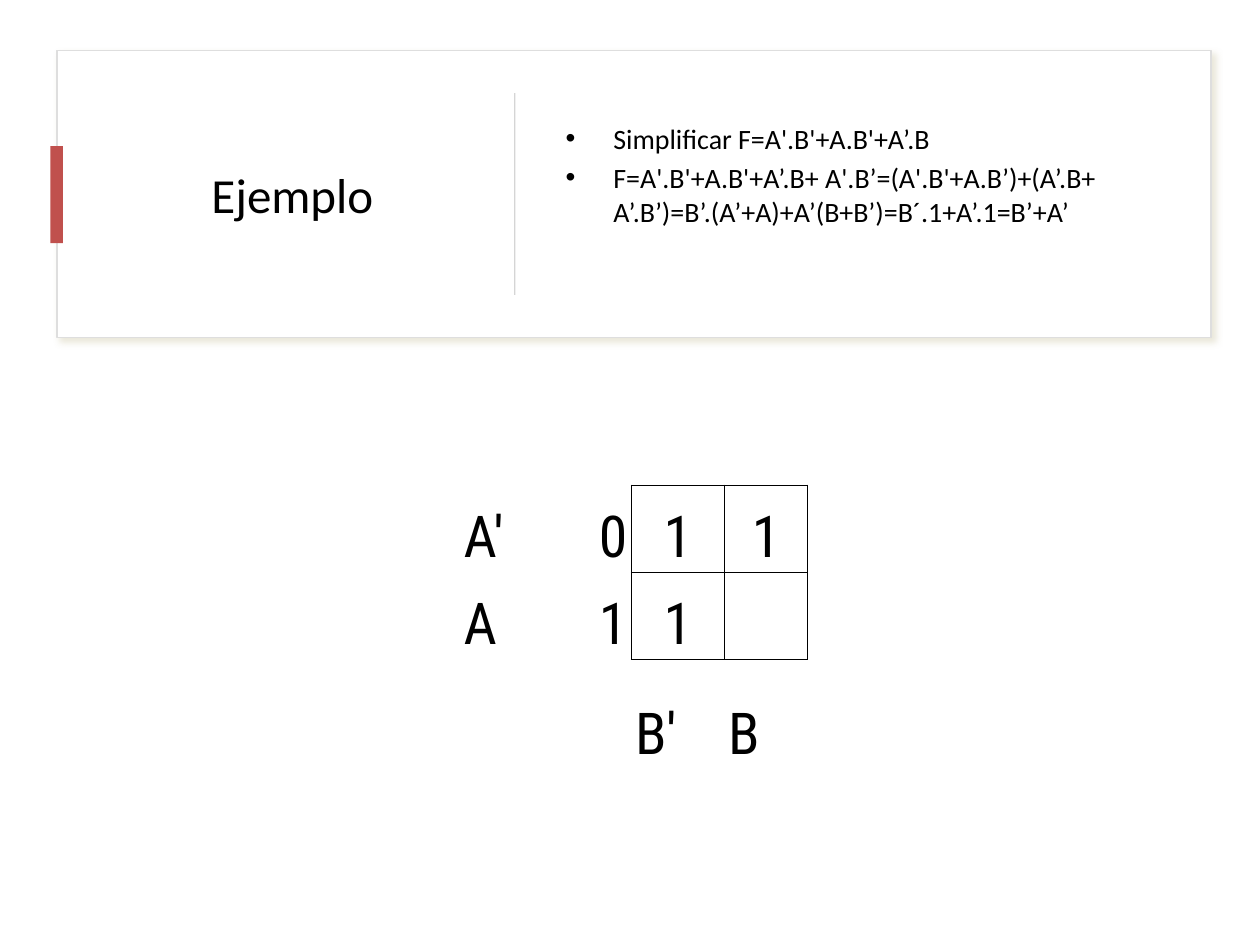
from lxml.etree import SubElement
from pptx import Presentation
from pptx.dml.color import RGBColor
from pptx.enum.shapes import MSO_SHAPE as Shape
from pptx.enum.text import MSO_ANCHOR as Anchor, PP_ALIGN as Align
from pptx.oxml.ns import qn
from pptx.util import Inches, Pt

BLACK = RGBColor(0x00, 0x00, 0x00)
WHITE = RGBColor(0xFF, 0xFF, 0xFF)
FRAME_GRAY = RGBColor(0xDE, 0xDE, 0xDE)
DIVIDER_GRAY = RGBColor(0xD5, 0xD5, 0xD5)
ACCENT_RED = RGBColor(0xC0, 0x50, 0x4D)
SHADOW_TAN = RGBColor(0xD5, 0xD0, 0xB5)

STEPS = [
    "Simplificar F=A'.B'+A.B'+A’.B",
    "F=A'.B'+A.B'+A’.B+ A'.B’=(A'.B'+A.B’)+(A’.B+ A’.B’)=B’.(A’+A)+A’(B+B’)=B´.1+A’.1=B’+A’",
]
MAP_ROWS = [["A'", "0", "1", "1"], ["A", "1", "1", ""], ["", "", "B'", "B"]]
MAP_ALIGNS = [Align.LEFT, Align.RIGHT, Align.CENTER, Align.CENTER]
COLUMN_WIDTHS = [0.73, 0.63, 0.74, 0.66]
ROW_HEIGHTS = [0.69, 0.69, 0.87]


def add_run(paragraph, text, font_name, size):
    run = paragraph.add_run()
    run.text = text
    run.font.name = font_name
    run.font.size = Pt(size)
    run.font.color.rgb = BLACK


def add_rectangle(slide, left, top, width, height, color):
    shape = slide.shapes.add_shape(
        Shape.RECTANGLE, Inches(left), Inches(top), Inches(width), Inches(height))
    shape.shadow.inherit = False
    shape.fill.solid()
    shape.fill.fore_color.rgb = color
    shape.line.fill.background()
    return shape


def add_text_box(slide, left, top, width, height):
    box = slide.shapes.add_textbox(
        Inches(left), Inches(top), Inches(width), Inches(height))
    frame = box.text_frame
    frame.word_wrap = True
    frame.vertical_anchor = Anchor.MIDDLE
    return frame


def add_soft_shadow(shape):
    effects = shape._element.spPr.find(qn("a:effectLst"))
    shadow = SubElement(effects, qn("a:outerShdw"), blurRad=str(Pt(4)),
                        dist=str(Pt(3)), dir="2700000", algn="tl", rotWithShape="0")
    color = SubElement(shadow, qn("a:srgbClr"), val=str(SHADOW_TAN))
    SubElement(color, qn("a:alpha"), val="50000")


def add_bullet(paragraph):
    properties = paragraph._p.get_or_add_pPr()
    properties.set("marL", str(Inches(0.38)))
    properties.set("indent", str(-Inches(0.38)))
    SubElement(properties, qn("a:buFont"), typeface="Arial")
    SubElement(properties, qn("a:buChar"), char="•")


def add_header(slide, left, top, width, height):
    card = add_rectangle(slide, left, top, width, height, WHITE)
    card.line.color.rgb = FRAME_GRAY
    card.line.width = Pt(1)
    add_soft_shadow(card)

    text_top, text_height = top + 0.24, height - 0.48
    title = add_text_box(slide, left + 0.41, text_top, 2.92, text_height)
    title.paragraphs[0].alignment = Align.CENTER
    add_run(title.paragraphs[0], "Ejemplo", "Calibri", 28)

    middle = top + height / 2
    add_rectangle(slide, left - 0.05, middle - 0.38, 0.1, 0.77, ACCENT_RED)
    add_rectangle(slide, left + 3.63, middle - 0.8, 0.01, 1.6, DIVIDER_GRAY)

    body = add_text_box(slide, left + 3.94, text_top, 4.92, text_height)
    body.margin_bottom = Inches(0.36)
    for index, step in enumerate(STEPS):
        paragraph = body.add_paragraph() if index else body.paragraphs[0]
        add_bullet(paragraph)
        if index:
            paragraph.space_before = Pt(3.2)
        add_run(paragraph, step, "Calibri", 16)


def set_borders(cell, sides):
    properties = cell._tc.get_or_add_tcPr()
    for side in ("L", "R", "T", "B"):
        if side in sides:
            line = SubElement(properties, qn("a:ln" + side), w=str(Pt(0.5)))
            fill = SubElement(line, qn("a:solidFill"))
            SubElement(fill, qn("a:srgbClr"), val=str(BLACK))
        else:
            line = SubElement(properties, qn("a:ln" + side), w="0")
            SubElement(line, qn("a:noFill"))


def border_sides(row, column):
    if row < 2:
        return ["", "R", "LRTB", "LRTB"][column]
    return "T" if column >= 2 else ""


def add_karnaugh_map(slide, left, top):
    frame = slide.shapes.add_table(
        len(ROW_HEIGHTS), len(COLUMN_WIDTHS), Inches(left), Inches(top),
        Inches(sum(COLUMN_WIDTHS)), Inches(sum(ROW_HEIGHTS)))
    table = frame.table
    table.first_row = False
    table.horz_banding = False
    for column, width in zip(table.columns, COLUMN_WIDTHS):
        column.width = Inches(width)
    for row, height in zip(table.rows, ROW_HEIGHTS):
        row.height = Inches(height)
    for row, values in enumerate(MAP_ROWS):
        for column, value in enumerate(values):
            cell = table.cell(row, column)
            set_borders(cell, border_sides(row, column))
            cell.fill.background()
            cell.vertical_anchor = Anchor.BOTTOM
            cell.margin_left = cell.margin_right = cell.margin_top = Inches(0.03)
            cell.margin_bottom = 0
            if value:
                paragraph = cell.text_frame.paragraphs[0]
                paragraph.alignment = MAP_ALIGNS[column] if row < 2 else Align.LEFT
                add_run(paragraph, value, "Roboto Condensed", 33)


def main():
    presentation = Presentation()
    presentation.slide_width = Inches(10)
    presentation.slide_height = Inches(7.5)
    slide = presentation.slides.add_slide(presentation.slide_layouts[6])
    add_header(slide, 0.45, 0.4, 9.16, 2.28)
    add_karnaugh_map(slide, 3.65, 3.85)
    presentation.save("out.pptx")


if __name__ == "__main__":
    main()
